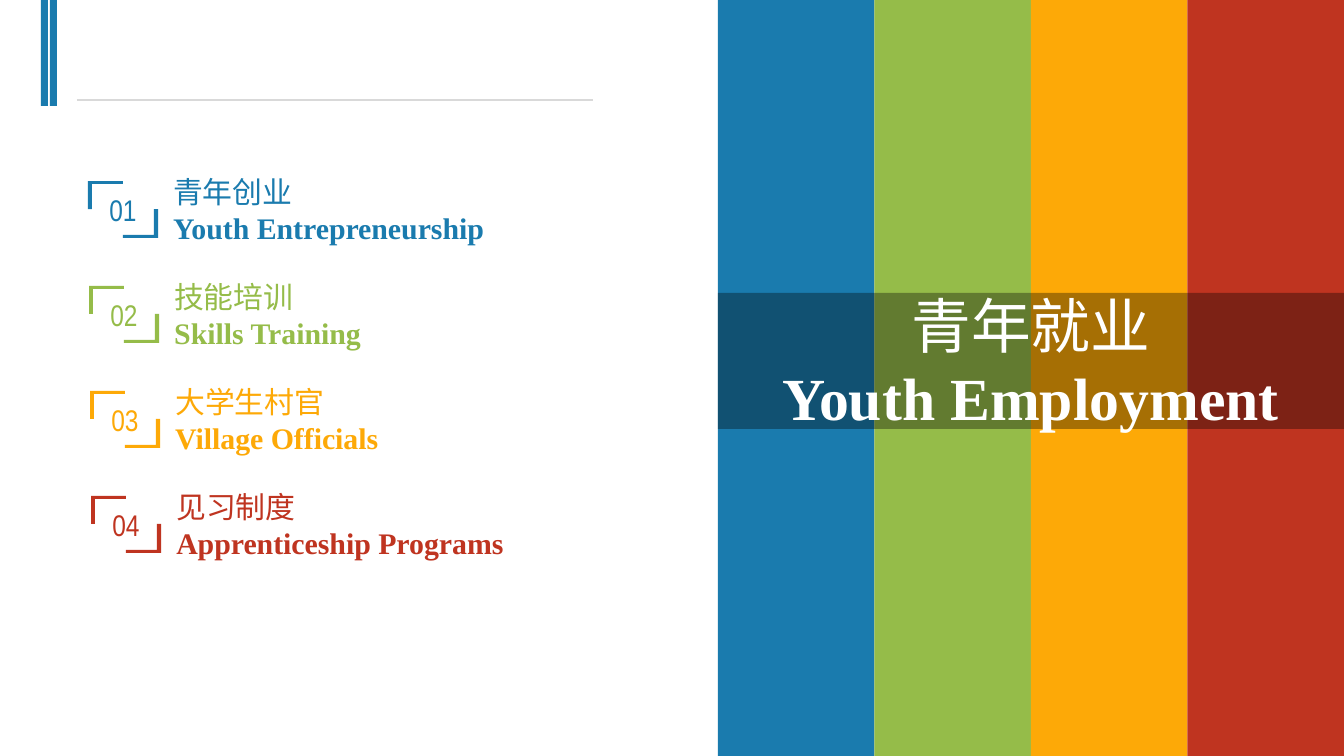
from lxml import etree
from pptx import Presentation
from pptx import util as u
from pptx.dml.color import RGBColor
from pptx.enum import shapes, text
from pptx.oxml.ns import qn

PX = 914400 / 134.4
COLORS = {
    "blue": "1A7BAE", "green": "95BC49", "amber": "FDA907", "red": "BF3420",
    "rule": "D9D9D9", "shade": "000000", "white": "FFFFFF",
}
ACCENTS = ["blue", "green", "amber", "red"]
TOPICS = [
    ("青年创业", "Youth Entrepreneurship"),
    ("技能培训", "Skills Training"),
    ("大学生村官", "Village Officials"),
    ("见习制度", "Apprenticeship Programs"),
]


def px(length):
    return u.Emu(round(length * PX))


def rgb(color):
    return RGBColor.from_string(COLORS[color])


def paint(part, color):
    part.shadow.inherit = False
    part.fill.solid()
    part.fill.fore_color.rgb = rgb(color)
    part.line.fill.background()


def add_bar(slide, left, top, width, height, color):
    bar = slide.shapes.add_shape(
        shapes.MSO_SHAPE.RECTANGLE, px(left), px(top), px(width), px(height))
    paint(bar, color)
    return bar


def write(frame, lines, size, color, align):
    """Each line is (wording, font, bold)."""
    frame.word_wrap = True
    for i, (wording, font, bold) in enumerate(lines):
        paragraph = frame.paragraphs[0] if i == 0 else frame.add_paragraph()
        paragraph.alignment = align
        run = paragraph.add_run()
        run.text = wording
        run.font.color.rgb = rgb(color)
        for key, value in {"name": font, "size": u.Pt(size), "bold": bold}.items():
            setattr(run.font, key, value)


def header(slide, left, top, width, height):
    # Twin bars
    for offset in (0, 9):
        add_bar(slide, left + offset, top, 7, height, "blue")
    # Title rule
    rule = slide.shapes.add_connector(
        shapes.MSO_CONNECTOR.STRAIGHT,
        px(left + 36), px(top + 100), px(left + width), px(top + 100))
    rule.line.color.rgb = rgb("rule")
    rule.line.width = u.Pt(0.75)
    etree.SubElement(rule._element.spPr, qn("a:effectLst"))


def number_frame(slide, left, top, width, height, number, color):
    stroke, mid_x, mid_y = 4, width / 2, height / 2
    upper = [(0, 0), (mid_x, 0), (mid_x, stroke - 1),
             (stroke, stroke - 1), (stroke, mid_y), (0, mid_y)]
    # The lower corner is the upper one turned half way round
    lower = [(width - x, height - y) for x, y in upper]
    pen = slide.shapes.build_freeform(*upper[0], scale=PX)
    pen.add_line_segments(upper[1:], close=True)
    pen.move_to(*lower[0])
    pen.add_line_segments(lower[1:], close=True)
    corners = pen.convert_to_shape(px(left), px(top))
    paint(corners, color)
    corners.text_frame.vertical_anchor = text.MSO_ANCHOR.MIDDLE
    write(corners.text_frame, [(number, "Arial Narrow", False)], 16, color,
          text.PP_ALIGN.CENTER)


def topic_row(slide, left, top, number, topic, color):
    chinese, english = topic
    label = slide.shapes.add_textbox(px(left + 72), px(top), px(535), px(86))
    write(label.text_frame,
          [(chinese, "Arial", False), (english, "Times New Roman", True)],
          16, color, text.PP_ALIGN.LEFT)
    number_frame(slide, left, top + 14, 70, 57, number, color)


def topic_list(slide, left, top, pitch):
    for i, (topic, color) in enumerate(zip(TOPICS, ACCENTS)):
        topic_row(slide, left + i, top + i * pitch, f"{i + 1:02}", topic, color)


def title_panel(slide, left, top, width, height):
    # Colour stripes
    stripe = width / len(ACCENTS)
    for i, color in enumerate(ACCENTS):
        add_bar(slide, left + i * stripe, top, stripe, height, color)
    # Translucent banner
    banner = add_bar(slide, left, top + 293, width, 136, "shade")
    tint = banner._element.spPr.find(qn("a:solidFill"))[0]
    etree.SubElement(tint, qn("a:alpha"), val="34000")
    banner.text_frame.vertical_anchor = text.MSO_ANCHOR.MIDDLE
    write(banner.text_frame,
          [("青年就业", "Arial Narrow", False),
           ("Youth Employment", "Times New Roman", True)],
          32, "white", text.PP_ALIGN.CENTER)


def main():
    deck = Presentation()
    deck.slide_width, deck.slide_height = px(1344), px(756)
    slide = deck.slides.add_slide(deck.slide_layouts[6])
    header(slide, 41, 0, 552, 106)
    topic_list(slide, 88, 167, 105)
    title_panel(slide, 718, 0, 626, 756)
    deck.save("out.pptx")


if __name__ == "__main__":
    main()
